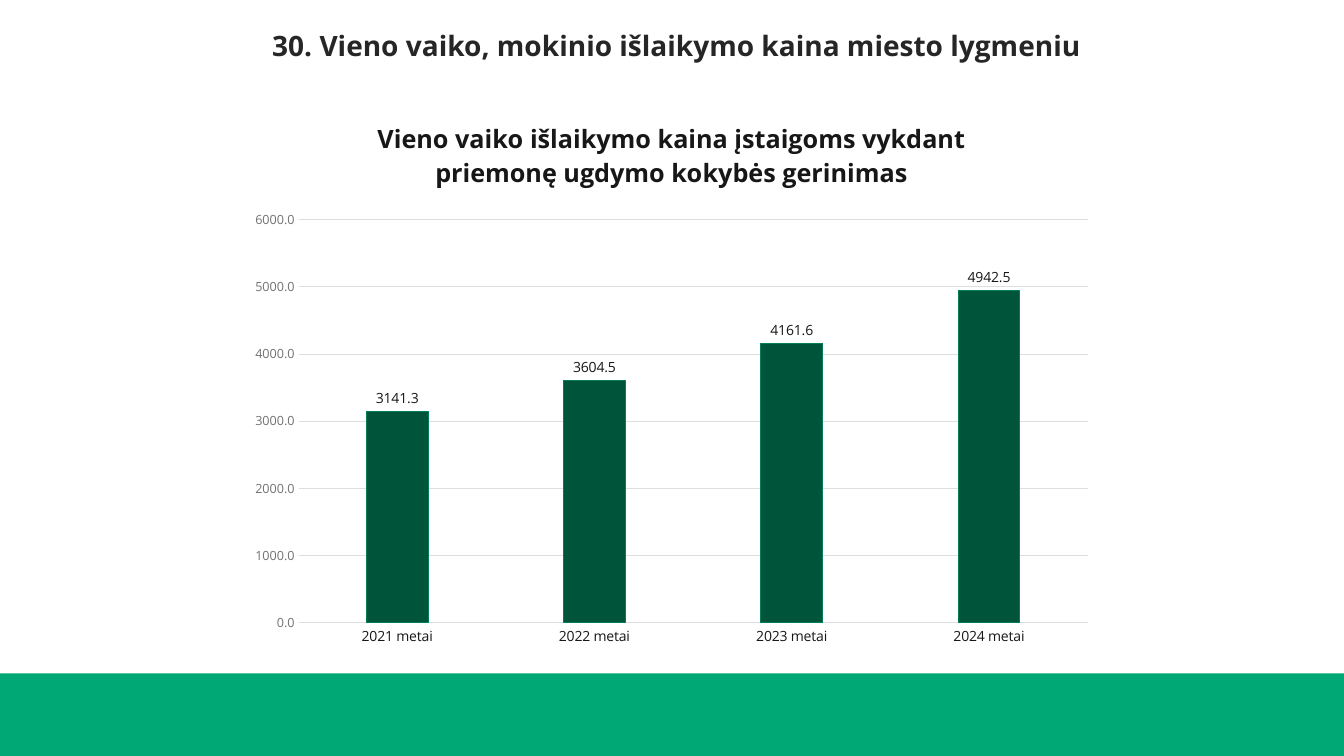
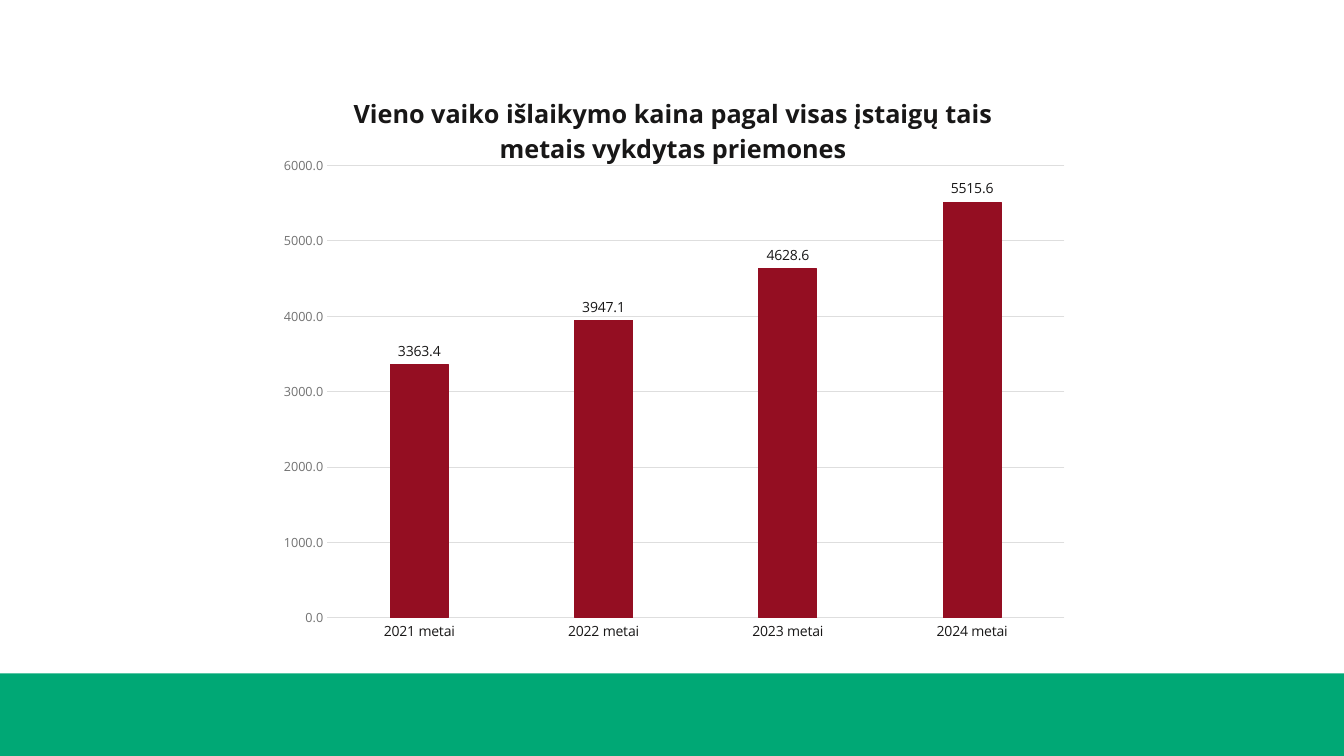
from pptx import Presentation
from pptx.chart.data import CategoryChartData
from pptx.dml.color import RGBColor
from pptx.enum.chart import XL_CHART_TYPE, XL_LABEL_POSITION, XL_TICK_MARK
from pptx.enum.shapes import MSO_SHAPE
from pptx.enum.text import MSO_ANCHOR, MSO_AUTO_SIZE, PP_ALIGN
from pptx.oxml import parse_xml
from pptx.oxml.ns import nsdecls
from pptx.util import Inches, Pt

FONT = "Open Sans"
FORMAT = "0.0"
WHITE = RGBColor(0xFF, 0xFF, 0xFF)
BAND = RGBColor(0x00, 0xA8, 0x75)
DARK = RGBColor(0x26, 0x26, 0x26)
BLACK = RGBColor(0x18, 0x17, 0x17)
GREY = RGBColor(0x72, 0x72, 0x72)
GRID = RGBColor(0xDE, 0xDE, 0xDE)
GREEN = RGBColor(0x00, 0x54, 0x3A)
EDGE = RGBColor(0x00, 0x7E, 0x58)
RED = RGBColor(0x94, 0x0E, 0x22)

WIDTH, HEIGHT = Inches(13.33), Inches(7.5)
BAND_TOP = Inches(6.68)
TITLE_ONLY, BLANK = 5, 6
YEARS = [f"{year} metai" for year in range(2021, 2025)]


def style(font, size, color, bold=False):
    font.name = FONT
    font.size = Pt(size)
    font.bold = bold
    font.color.rgb = color


def rule(line, color):
    line.color.rgb = color
    line.width = Pt(0.75)


def new_slide(deck, layout):
    """Add a white slide with the green band at its foot."""
    slide = deck.slides.add_slide(deck.slide_layouts[layout])
    fill = slide.background.fill
    fill.solid()
    fill.fore_color.rgb = WHITE
    band = slide.shapes.add_shape(
        MSO_SHAPE.RECTANGLE, 0, BAND_TOP, WIDTH, HEIGHT - BAND_TOP)
    band.shadow.inherit = False
    band.fill.solid()
    band.fill.fore_color.rgb = BAND
    band.line.fill.background()
    return slide


def add_title(slide, text):
    title = slide.shapes.title
    title.left, title.top = Inches(2.6), Inches(0.23)
    title.width, title.height = Inches(8.37), Inches(0.44)
    frame = title.text_frame
    frame.word_wrap = False
    frame.auto_size = MSO_AUTO_SIZE.SHAPE_TO_FIT_TEXT
    frame.vertical_anchor = MSO_ANCHOR.TOP
    para = frame.paragraphs[0]
    para.alignment = PP_ALIGN.LEFT
    run = para.add_run()
    run.text = text
    style(run.font, 20, DARK, bold=True)


def place_plot(chart, plot):
    """Fix the inner plot area, given as fractions of the chart."""
    area = chart.element.xpath("c:chart/c:plotArea")[0]
    for old in area.xpath("c:layout"):
        area.remove(old)
    parts = "".join(f'<c:{key} val="{val}"/>' for key, val in zip("xywh", plot))
    area.insert(0, parse_xml(
        f'<c:layout {nsdecls("c")}><c:manualLayout>'
        '<c:layoutTarget val="inner"/>'
        '<c:xMode val="edge"/><c:yMode val="edge"/>'
        f'{parts}</c:manualLayout></c:layout>'))


def style_axes(chart):
    cats, vals = chart.category_axis, chart.value_axis
    for axis, size, color in ((cats, 10, BLACK), (vals, 9, GREY)):
        axis.major_tick_mark = axis.minor_tick_mark = XL_TICK_MARK.NONE
        style(axis.tick_labels.font, size, color)
    rule(cats.format.line, GRID)
    vals.format.line.fill.background()
    vals.has_major_gridlines = True
    rule(vals.major_gridlines.format.line, GRID)
    vals.minimum_scale, vals.maximum_scale = 0, 6000
    vals.major_unit = 1000
    vals.tick_labels.number_format = FORMAT
    vals.tick_labels.number_format_is_linked = False


def style_bars(chart, color, edge):
    plot = chart.plots[0]
    plot.gap_width, plot.overlap = 219, -27
    plot.vary_by_categories = False
    bars = plot.series[0]
    bars.format.fill.solid()
    bars.format.fill.fore_color.rgb = color
    rule(bars.format.line, edge)
    labels = bars.data_labels
    labels.show_value = True
    labels.position = XL_LABEL_POSITION.OUTSIDE_END
    labels.number_format = FORMAT
    labels.number_format_is_linked = False
    style(labels.font, 10, BLACK)


def add_bars(slide, box, plot, name, costs, color, edge):
    data = CategoryChartData(number_format=FORMAT)
    data.categories = YEARS
    data.add_series(name, costs)
    chart = slide.shapes.add_chart(
        XL_CHART_TYPE.COLUMN_CLUSTERED, *map(Inches, box), data).chart
    style(chart.font, 10, DARK)
    chart.has_legend = False
    chart.has_title = True
    chart.chart_title.include_in_layout = False
    run = chart.chart_title.text_frame.paragraphs[0].add_run()
    run.text = name
    style(run.font, 18, BLACK, bold=True)
    style_axes(chart)
    style_bars(chart, color, edge)
    place_plot(chart, plot)


def main():
    deck = Presentation()
    deck.slide_width, deck.slide_height = WIDTH, HEIGHT

    slide = new_slide(deck, TITLE_ONLY)
    add_title(slide, "30. Vieno vaiko, mokinio išlaikymo kaina miesto lygmeniu")
    add_bars(slide, (2.36, 0.96, 8.6, 5.55), (0.07, 0.22, 0.91, 0.72),
             "Vieno vaiko išlaikymo kaina įstaigoms vykdant "
             "priemonę ugdymo kokybės gerinimas",
             (3141.3, 3604.5, 4161.6, 4942.5), GREEN, EDGE)

    slide = new_slide(deck, BLANK)
    add_bars(slide, (2.64, 0.71, 8.07, 5.83), (0.075, 0.16, 0.906, 0.77),
             "Vieno vaiko išlaikymo kaina pagal visas įstaigų tais "
             "metais vykdytas priemones",
             (3363.4, 3947.1, 4628.6, 5515.6), RED, RED)

    deck.save("out.pptx")


if __name__ == "__main__":
    main()
